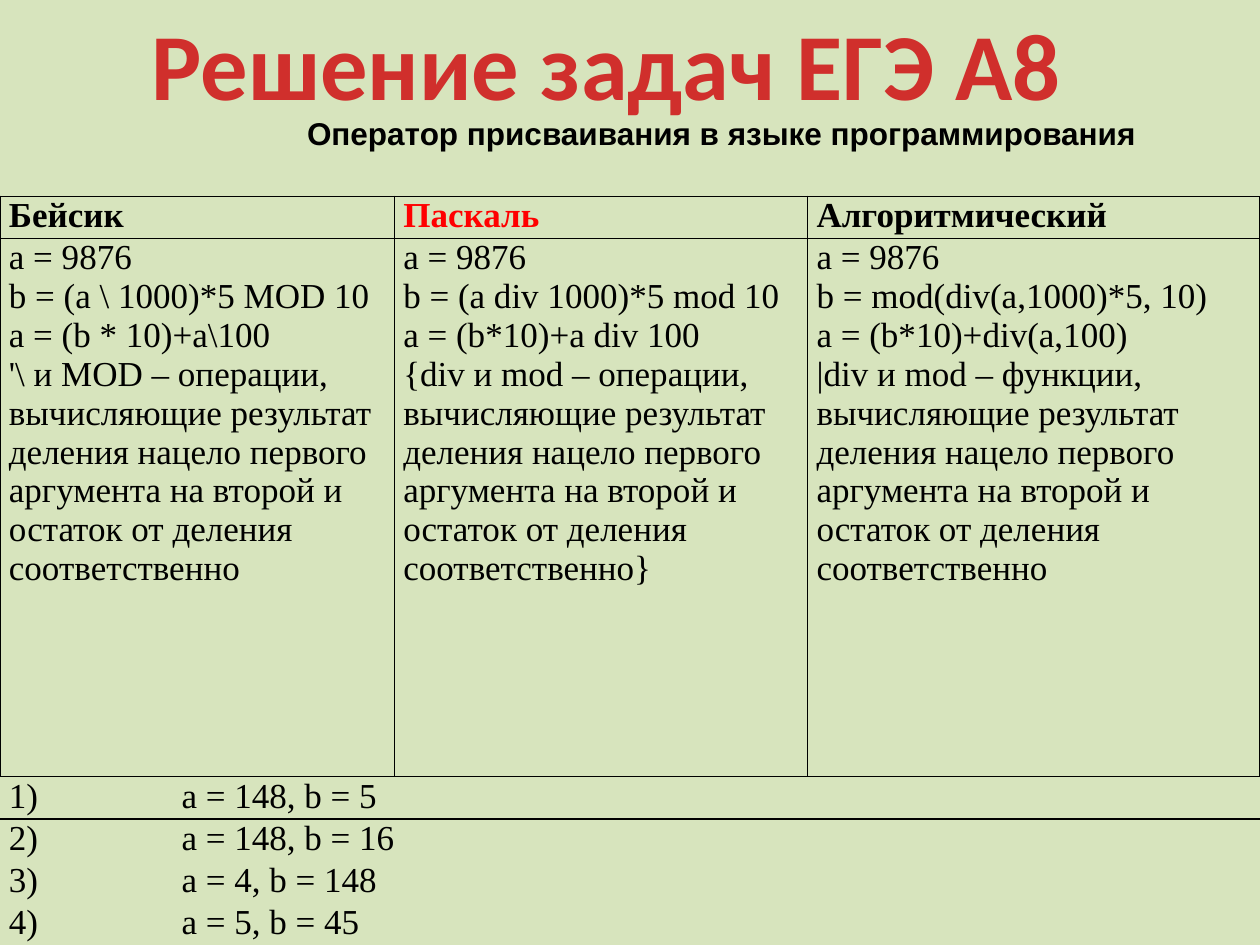
from lxml import etree
from pptx import Presentation
from pptx.dml.color import RGBColor
from pptx.enum import text
from pptx.oxml import ns
from pptx.util import Cm, Pt

BLACK = RGBColor(0x00, 0x00, 0x00)
RED = RGBColor(0xFF, 0x00, 0x00)
PALE_GREEN = RGBColor(0xD7, 0xE4, 0xBD)
TITLE_STOPS = [
    (0, RGBColor(0xFC, 0x7C, 0x7A)),
    (75, RGBColor(0xD0, 0x2F, 0x2C)),
    (100, RGBColor(0xC7, 0x05, 0x00)),
]
PLAIN_TABLE_STYLE = "{2D5ABB26-0587-4C30-8999-92F81FD0307C}"

TITLE = "Решение задач ЕГЭ А8"
SUBTITLE = "Оператор присваивания в языке программирования"
MEANING = ("вычисляющие результат деления нацело первого аргумента "
           "на второй и остаток от деления соответственно")

# Heading, its colour, first and last grid column, paragraphs made of lines
LANGUAGES = [
    ("Бейсик", BLACK, 0, 1, [
        ["a = 9876", "b = (a \\ 1000)*5 MOD 10", "a = (b * 10)+a\\100",
         f"'\\ и MOD – операции, {MEANING}"],
    ]),
    ("Паскаль", RED, 2, 2, [
        ["a = 9876", "b = (a div 1000)*5 mod 10", "a = (b*10)+a div 100"],
        [f"{{div и mod – операции, {MEANING}}}"],
    ]),
    ("Алгоритмический", BLACK, 3, 4, [
        ["a = 9876", "b = mod(div(a,1000)*5, 10)"],
        ["a = (b*10)+div(a,100)"],
        [f"|div и mod – функции, {MEANING}"],
    ]),
]
ANSWERS = ["a = 148, b = 5", "a = 148, b = 16", "a = 4, b = 148", "a = 5, b = 45"]

COLUMN_WIDTHS = [3.48, 4.47, 8.33, 4.01, 5.11]
ROW_HEIGHTS = [0.84, 10.85] + [0.66] * len(ANSWERS)


def add_span(para, words, font_name, size, bold=False, color=BLACK):
    span = para.add_run()
    span.text = words
    span.font.name = font_name
    span.font.size = Pt(size)
    span.font.bold = bold
    span.font.color.rgb = color
    return span


def fill_cell(cell, paragraphs, bold=False, color=BLACK):
    """Write paragraphs, each a list of lines parted by line breaks."""
    for number, lines in enumerate(paragraphs):
        frame = cell.text_frame
        para = frame.add_paragraph() if number else frame.paragraphs[0]
        for line_number, line in enumerate(lines):
            if line_number:
                para.add_line_break()
            add_span(para, line, "Times New Roman", 20, bold, color)


def draw_borders(cell, sides):
    properties = cell._tc.get_or_add_tcPr()
    for position, side in enumerate(sides):
        line = etree.Element(ns.qn(f"a:ln{side}"), w=str(Pt(1)))
        solid = etree.SubElement(line, ns.qn("a:solidFill"))
        etree.SubElement(solid, ns.qn("a:srgbClr"), val=str(BLACK))
        properties.insert(position, line)


def set_gradient(font, stops):
    """Give the font a top-to-bottom gradient with any number of stops."""
    font.fill.gradient()
    font.fill.gradient_angle = 270
    stop_list = font._element.find(f".//{ns.qn('a:gsLst')}")
    for old_stop in list(stop_list):
        stop_list.remove(old_stop)
    for percent, color in stops:
        stop = etree.SubElement(stop_list, ns.qn("a:gs"), pos=str(percent * 1000))
        etree.SubElement(stop, ns.qn("a:srgbClr"), val=str(color))


def add_headings(page):
    title = page.shapes.title
    title.left, title.top, title.width, title.height = Cm(1.19), Cm(0), Cm(22.07), Cm(2.57)
    frame = title.text_frame
    frame.word_wrap = False
    frame.auto_size = text.MSO_AUTO_SIZE.SHAPE_TO_FIT_TEXT
    frame.vertical_anchor = text.MSO_ANCHOR.TOP
    para = frame.paragraphs[0]
    para.alignment = text.PP_ALIGN.CENTER
    span = add_span(para, TITLE, "Calibri", 54, bold=True)
    set_gradient(span.font, TITLE_STOPS)

    box = page.shapes.add_textbox(Cm(5.94), Cm(2.18), Cm(19.46), Cm(1.02))
    box.text_frame.word_wrap = True
    box.text_frame.auto_size = text.MSO_AUTO_SIZE.SHAPE_TO_FIT_TEXT
    add_span(box.text_frame.paragraphs[0], SUBTITLE, "Arial", 18, bold=True)


def add_task_table(page):
    frame = page.shapes.add_table(
        len(ROW_HEIGHTS), len(COLUMN_WIDTHS), Cm(0), Cm(3.96),
        Cm(sum(COLUMN_WIDTHS)), Cm(sum(ROW_HEIGHTS)))
    table = frame.table
    table.first_row = table.horz_banding = False
    table._tbl.tblPr.find(ns.qn("a:tableStyleId")).text = PLAIN_TABLE_STYLE
    for column, width in zip(table.columns, COLUMN_WIDTHS):
        column.width = Cm(width)
    for row, height in zip(table.rows, ROW_HEIGHTS):
        row.height = Cm(height)

    for heading, color, first, last, program in LANGUAGES:
        for row, paragraphs in enumerate([[[heading]], program]):
            cell = table.cell(row, first)
            if last > first:
                cell.merge(table.cell(row, last))
            is_heading = row == 0
            fill_cell(cell, paragraphs, is_heading, color if is_heading else BLACK)

    for number, answer in enumerate(ANSWERS, 1):
        row = number + 1
        table.cell(row, 1).merge(table.cell(row, 3))
        fill_cell(table.cell(row, 0), [[f"{number})"]])
        fill_cell(table.cell(row, 1), [[answer]])

    for row_number, row in enumerate(table.rows):
        for cell in row.cells:
            cell.margin_left = cell.margin_right = Cm(0.18)
            cell.margin_top = cell.margin_bottom = 0
            cell.fill.background()
            if row_number < 2:
                draw_borders(cell, "LRTB")
            elif row_number == 2:
                draw_borders(cell, "T")
            if not cell.text_frame.text:
                cell.text_frame.paragraphs[0].font.size = Pt(10)


def main():
    deck = Presentation()
    deck.slide_width, deck.slide_height = Cm(25.4), Cm(19.05)
    page = deck.slides.add_slide(deck.slide_layouts.get_by_name("Title Only"))
    page.background.fill.solid()
    page.background.fill.fore_color.rgb = PALE_GREEN
    add_task_table(page)
    add_headings(page)
    deck.save("out.pptx")


if __name__ == "__main__":
    main()
